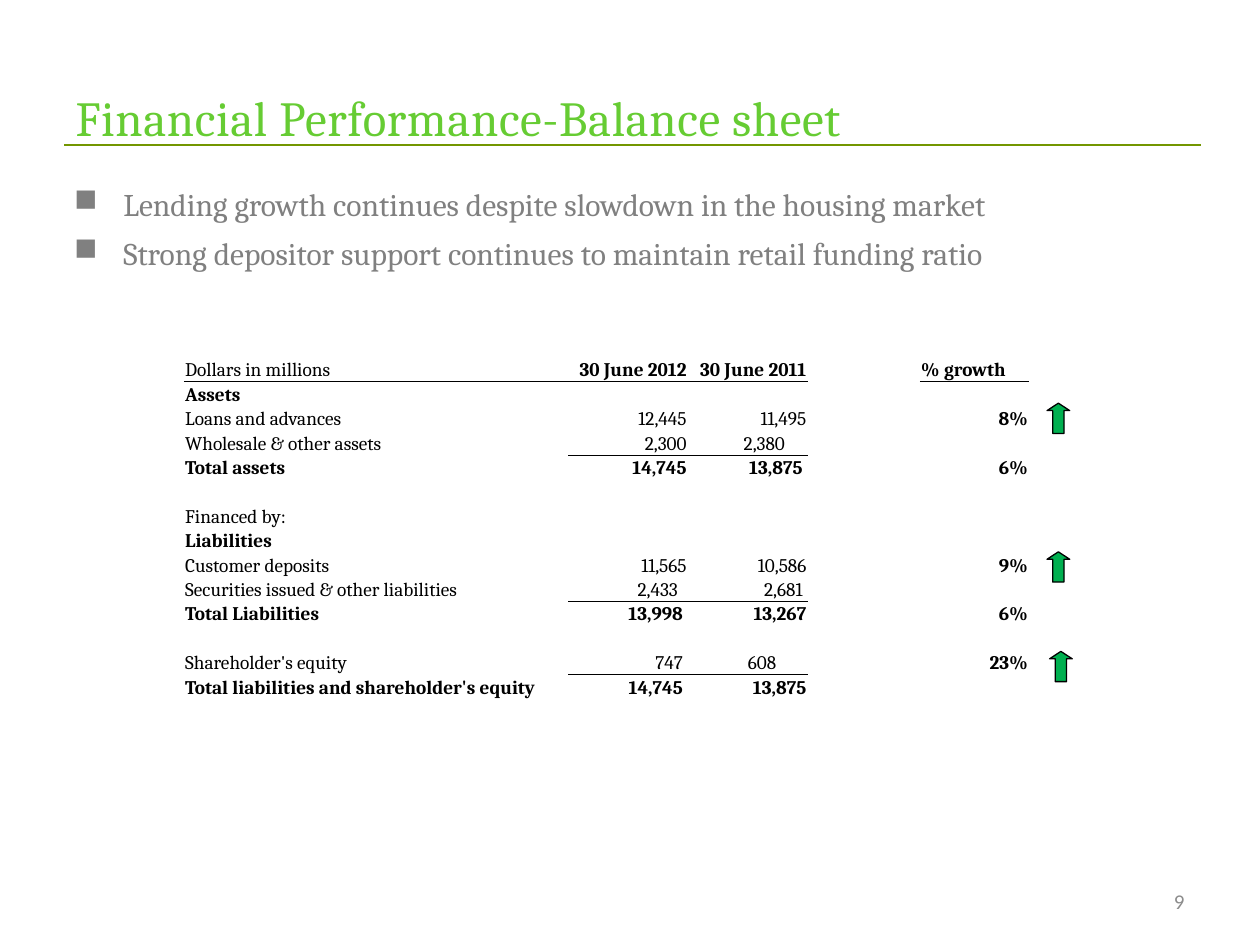
"""Build the balance sheet slide with its key messages, table and growth arrows."""
from dataclasses import dataclass

from lxml.etree import SubElement
from pptx import Presentation
from pptx.dml.color import RGBColor
from pptx.enum.shapes import MSO_CONNECTOR, MSO_SHAPE
from pptx.enum.text import MSO_ANCHOR as ANCHOR, MSO_AUTO_SIZE, PP_ALIGN as ALIGN
from pptx.oxml.ns import qn
from pptx.util import Inches, Pt


@dataclass(frozen=True)
class Theme:
    heading: str = "66CC33"
    rule: str = "739600"
    body: str = "808080"
    number: str = "8C8C8C"
    ink: str = "000000"
    arrow: str = "00B050"
    font: str = "Cambria"
    number_font: str = "Calibri"
    title_pt: float = 28
    body_pt: float = 18
    number_pt: float = 12
    table_pt: float = 11
    line_pt: float = 0.75
    border_pt: float = 0.5


@dataclass(frozen=True)
class Entry:
    label: str = ""
    values: tuple[str, str] = ("", "")
    growth: str = ""
    bold_label: bool = False
    bold_values: bool = False
    ruled: tuple[int, ...] = ()
    pads: tuple[float, float] = (0, 0)
    growth_align: ALIGN = ALIGN.RIGHT


@dataclass(frozen=True)
class Arrow:
    left: float
    top: float


THEME = Theme()
MESSAGES = (
    "Lending growth continues despite slowdown in the housing market",
    "Strong depositor support continues to maintain retail funding ratio",
)
COLUMNS = (3.05, 0.95, 0.95, 0.89, 0.87)
SUBTOTAL = (1, 2)
ENTRIES = (
    Entry("Dollars in millions", ("30 June 2012", "30 June 2011"), "% growth",
          bold_values=True, ruled=(0, 1, 2, 4), growth_align=ALIGN.LEFT),
    Entry("Assets", bold_label=True),
    Entry("Loans and advances", ("12,445", "11,495"), "8%"),
    Entry("Wholesale & other assets", ("2,300", "2,380"), ruled=SUBTOTAL, pads=(0, 0.17)),
    Entry("Total assets", ("14,745", "13,875"), "6%", True, True, pads=(0, 0.03)),
    Entry(),
    Entry("Financed by:"),
    Entry("Liabilities", bold_label=True),
    Entry("Customer deposits", ("11,565", "10,586"), "9%"),
    Entry("Securities issued & other liabilities", ("2,433", "2,681"),
          ruled=SUBTOTAL, pads=(0.07, 0.03)),
    Entry("Total Liabilities", ("13,998", "13,267"), "6%", True, True, pads=(0.03, 0)),
    Entry(),
    Entry("Shareholder's equity", ("747", "608"), "23%", ruled=SUBTOTAL, pads=(0.03, 0.24)),
    Entry("Total liabilities and shareholder's equity", ("14,745", "13,875"), "",
          True, True, pads=(0.03, 0)),
) + (Entry(),) * 5
ARROWS = (Arrow(8.31, 3.2), Arrow(8.31, 4.38), Arrow(8.33, 5.17))


def rgb(color: str) -> RGBColor:
    return RGBColor.from_string(color)


def style(p, size: float, color: str, font: str = THEME.font, bold: bool = False) -> None:
    for r in p.runs:
        r.font.size, r.font.name, r.font.bold = Pt(size), font, bold
        r.font.color.rgb = rgb(color)


def add_title(s, text: str) -> None:
    sp = s.shapes.title
    sp.left, sp.top, sp.width, sp.height = map(Inches, (0.5, 0.3, 9, 1.25))
    tf = sp.text_frame
    tf.text = text
    tf.auto_size = MSO_AUTO_SIZE.NONE
    tf.vertical_anchor = ANCHOR.MIDDLE
    p = tf.paragraphs[0]
    p.alignment = ALIGN.LEFT
    style(p, THEME.title_pt, THEME.heading)
    p.runs[0].font._element.set("spc", "40")


def add_rule(s) -> None:
    line = s.shapes.add_connector(
        MSO_CONNECTOR.STRAIGHT, *map(Inches, (0.51, 1.15, 9.53, 1.15)))
    line.line.color.rgb = rgb(THEME.rule)
    line.line.width = Pt(THEME.line_pt)
    SubElement(line._element.spPr, qn("a:effectLst"))


def add_messages(s, messages: tuple[str, ...]) -> None:
    tf = s.shapes.add_textbox(*map(Inches, (0.49, 1.42, 9, 4.66))).text_frame
    tf.word_wrap = True
    tf.text = "\n".join(messages)
    for p in tf.paragraphs:
        props = p._p.get_or_add_pPr()
        props.set("marL", str(Inches(0.39)))
        props.set("indent", str(-Inches(0.39)))
        SubElement(SubElement(props, qn("a:buClr")), qn("a:srgbClr"), val=THEME.body)
        SubElement(props, qn("a:buChar"), char="■")
        p.space_after = Pt(0.35 * THEME.body_pt)
        style(p, THEME.body_pt, THEME.body)


def add_bottom_border(cell) -> None:
    props = cell._tc.get_or_add_tcPr()
    line = SubElement(props, qn("a:lnB"), w=str(Pt(THEME.border_pt)))
    SubElement(SubElement(line, qn("a:solidFill")), qn("a:srgbClr"), val=THEME.ink)


def fill_cell(cell, text: str, align: ALIGN, bold: bool, pad: float, ruled: bool) -> None:
    cell.margin_left = cell.margin_top = Inches(0.01)
    cell.margin_right, cell.margin_bottom = Inches(0.01 + pad), 0
    cell.vertical_anchor = ANCHOR.BOTTOM
    if ruled:
        add_bottom_border(cell)
    cell.fill.background()
    p = cell.text_frame.paragraphs[0]
    p.alignment = align
    if text:
        p.text = text
        style(p, THEME.table_pt, THEME.ink, bold=bold)
    else:
        SubElement(p._p, qn("a:endParaRPr"), sz=str(int(THEME.table_pt * 100)))


def add_balance_sheet(s, entries: tuple[Entry, ...]) -> None:
    frame = s.shapes.add_table(
        len(entries), len(COLUMNS), *map(Inches, (1.46, 2.65, sum(COLUMNS), 3.86)))
    table = frame.table
    table.first_row = table.horz_banding = False
    table._tbl.tblPr.find(qn("a:tableStyleId")).text = "{2D5ABB26-0587-4C30-8999-92F81FD0307C}"
    for column, width in zip(table.columns, COLUMNS):
        column.width = Inches(width)
    for i, entry in enumerate(entries):
        table.rows[i].height = Pt(13.9) if i else Inches(0.38)
        texts = (entry.label, *entry.values, "", entry.growth)
        aligns = (ALIGN.LEFT, ALIGN.RIGHT, ALIGN.RIGHT, ALIGN.LEFT, entry.growth_align)
        bolds = (entry.bold_label, entry.bold_values, entry.bold_values, False, True)
        pads = (0, *entry.pads, 0, 0)
        for j, (text, align, bold, pad) in enumerate(zip(texts, aligns, bolds, pads)):
            fill_cell(table.cell(i, j), text, align, bold, pad, j in entry.ruled)
    last = len(entries) - 1
    table.cell(last - 1, 0).merge(table.cell(last - 1, 1))
    table.cell(last, 0).merge(table.cell(last, 2))


def add_arrow(s, arrow: Arrow) -> None:
    sp = s.shapes.add_shape(
        MSO_SHAPE.UP_ARROW, *map(Inches, (arrow.left, arrow.top, 0.18, 0.24)))
    sp.adjustments[0], sp.adjustments[1] = 0.5, 0.33
    sp.shadow.inherit = False
    sp.fill.solid()
    sp.fill.fore_color.rgb = rgb(THEME.arrow)
    sp.line.color.rgb = rgb(THEME.ink)
    sp.line.width = Pt(THEME.line_pt)


def add_page_number(s, number: str) -> None:
    tf = s.shapes.add_textbox(*map(Inches, (7.17, 6.95, 2.33, 0.4))).text_frame
    tf.word_wrap = True
    tf.vertical_anchor = ANCHOR.MIDDLE
    tf.text = number
    p = tf.paragraphs[0]
    p.alignment = ALIGN.RIGHT
    style(p, THEME.number_pt, THEME.number, THEME.number_font)


def main() -> None:
    prs = Presentation()
    prs.slide_width, prs.slide_height = Inches(10), Inches(7.5)
    s = prs.slides.add_slide(prs.slide_layouts[5])
    add_rule(s)
    add_title(s, "Financial Performance-Balance sheet")
    add_messages(s, MESSAGES)
    for arrow in ARROWS:
        add_arrow(s, arrow)
    add_page_number(s, "9")
    add_balance_sheet(s, ENTRIES)
    prs.save("out.pptx")


if __name__ == "__main__":
    main()
